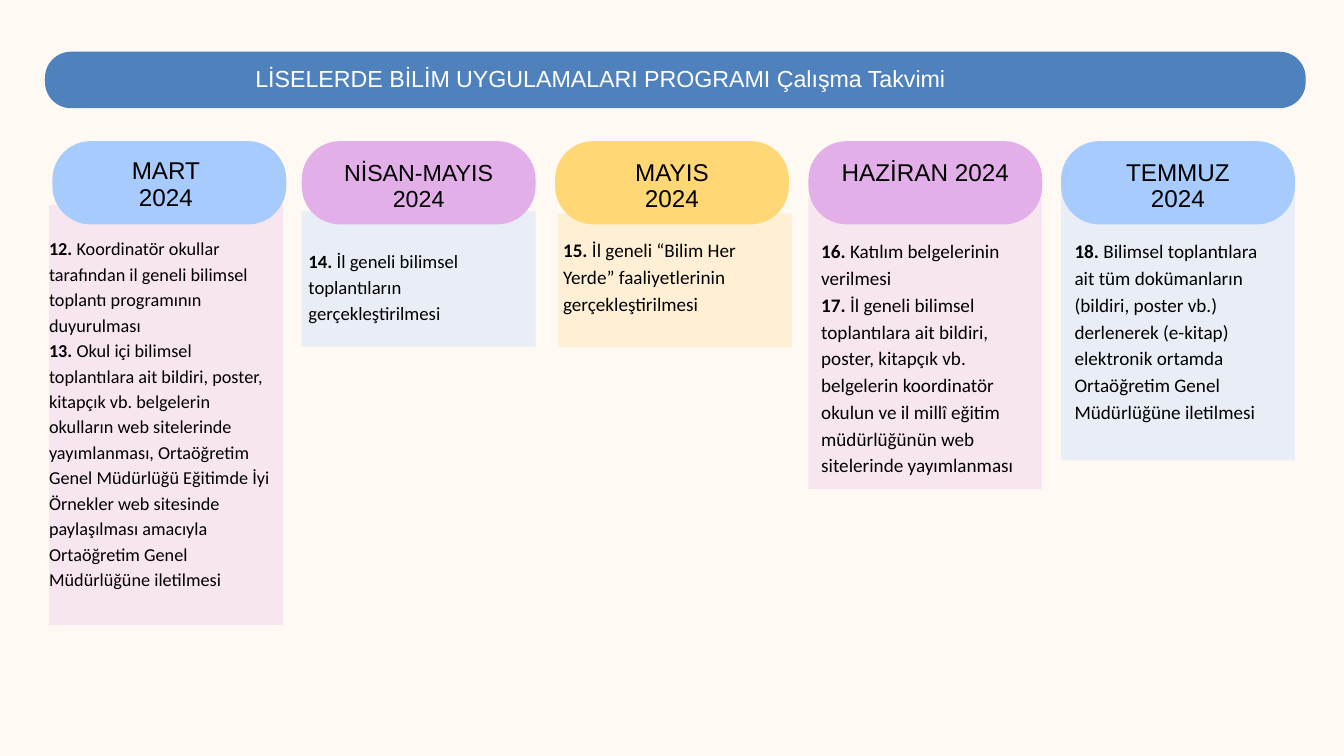
from dataclasses import dataclass

from lxml.etree import SubElement
from pptx import Presentation
from pptx.dml.color import RGBColor as Rgb
from pptx.enum.shapes import MSO_SHAPE as Shape
from pptx.enum.text import MSO_ANCHOR as Anchor, MSO_AUTO_SIZE as AutoSize, PP_ALIGN as Align
from pptx.oxml.ns import qn
from pptx.util import Inches, Pt

COLORS = {
    "paper": "FFF9F4", "banner": "4F81BD", "white": "FFFFFF", "black": "000000",
    "blue": "A8CBFD", "pink": "E3AFE8", "yellow": "FFD875", "pale_yellow": "FFD97A",
}
COLUMN_WIDTH, PILL_TOP, PILL_HEIGHT = 3.48, 2.1, 1.24
HEADING_WIDTH = 2.66


@dataclass
class Month:
    lines: list        # heading lines
    pill: tuple        # left, colour
    panel: tuple       # left, top, height, colour
    heading: tuple     # left, top, height, size
    body: tuple        # left, top, width, height, size
    tasks: list        # number, description


MONTHS = [
    Month(["MART", "2024"], (0.78, "blue"), (0.73, 3.05, 6.25, "pink"),
          (1.14, 2.35, 0.83, 26), (0.73, 3.48, 3.36, 6, 19.5),
          [("12. ", "Koordinatör okullar tarafından il geneli bilimsel toplantı "
                    "programının duyurulması"),
           ("13. ", "Okul içi bilimsel toplantılara ait bildiri, poster, kitapçık vb. "
                    "belgelerin okulların web sitelerinde yayımlanması, Ortaöğretim Genel "
                    "Müdürlüğü Eğitimde İyi Örnekler web sitesinde paylaşılması amacıyla "
                    "Ortaöğretim Genel Müdürlüğüne iletilmesi")]),
    Month(["NİSAN-MAYIS", "2024"], (4.49, "pink"), (4.49, 3.14, 2.02, "blue"),
          (4.9, 2.39, 0.76, 24.9), (4.59, 3.66, 3.29, 1.19, 20),
          [("14. ", "İl geneli bilimsel toplantıların gerçekleştirilmesi")]),
    Month(["MAYIS", "2024"], (8.26, "yellow"), (8.31, 3.18, 1.99, "pale_yellow"),
          (8.67, 2.37, 0.81, 26), (8.38, 3.49, 3.37, 1.55, 20.5),
          [("15. ", "İl geneli “Bilim Her Yerde” faaliyetlerinin gerçekleştirilmesi")]),
    Month(["HAZİRAN 2024"], (12.03, "pink"), (12.03, 2.96, 4.32, "pink"),
          (12.44, 2.38, 0.82, 26), (12.22, 3.51, 3.08, 4.34, 20.5),
          [("16. ", "Katılım belgelerinin verilmesi"),
           ("17. ", "İl geneli bilimsel toplantılara ait bildiri, poster, kitapçık vb. "
                    "belgelerin koordinatör okulun ve il millî eğitim müdürlüğünün web "
                    "sitelerinde yayımlanması")]),
    Month(["TEMMUZ", "2024"], (15.79, "blue"), (15.79, 2.72, 4.13, "blue"),
          (16.2, 2.37, 0.81, 26), (15.99, 3.51, 3.08, 3.19, 20.5),
          [("18. ", "Bilimsel toplantılara ait tüm dokümanların (bildiri, poster vb.) "
                    "derlenerek (e-kitap) elektronik ortamda Ortaöğretim Genel "
                    "Müdürlüğüne iletilmesi")]),
]


class Calendar:
    """Holds the style and the current slide."""
    heading_font, body_font = "Arial", "Calibri"

    def __init__(self, page):
        self.page = page
        page.background.fill.solid()
        page.background.fill.fore_color.rgb = Rgb.from_string(COLORS["paper"])

    def block(self, kind, place, color):
        shape = self.page.shapes.add_shape(kind, *map(Inches, place))
        shape.shadow.inherit = False
        shape.fill.solid()
        shape.fill.fore_color.rgb = Rgb.from_string(COLORS[color])
        shape.line.fill.background()
        return shape

    def panel(self, place, color):
        shape = self.block(Shape.RECTANGLE, place, color)
        tint = shape.element.spPr.find(qn("a:solidFill"))[0]
        SubElement(tint, qn("a:alpha"), val="25000")

    def pill(self, place, color):
        self.block(Shape.ROUNDED_RECTANGLE, place, color).adjustments[0] = 0.46

    def add_text(self, box, paragraphs, size, font, spacing, color="black", align=Align.LEFT):
        """Fill a box with paragraphs, each a list of (text, bold) runs."""
        frame = box.text_frame
        frame.word_wrap = True
        frame.auto_size = AutoSize.NONE
        frame.vertical_anchor = Anchor.TOP
        frame.margin_left = frame.margin_right = frame.margin_top = frame.margin_bottom = 0
        for index, runs in enumerate(paragraphs):
            para = frame.add_paragraph() if index else frame.paragraphs[0]
            para.alignment = align
            para.line_spacing = Pt(round(size * spacing, 1))
            for text, bold in runs:
                span = para.add_run()
                span.text = text
                span.font.name, span.font.size, span.font.bold = font, Pt(size), bold
                span.font.color.rgb = Rgb.from_string(COLORS[color])

    def title(self, place, text):
        box = self.page.shapes.title
        box.left, box.top, box.width, box.height = map(Inches, place)
        self.add_text(box, [[(text, False)]], 24.9, self.heading_font, 1, "white")
        box.element.getparent().append(box.element)  # in front of the banner

    def heading(self, place, lines, size):
        box = self.page.shapes.add_textbox(*map(Inches, place))
        self.add_text(box, [[(line, False)] for line in lines], size,
                      self.heading_font, 1.1, align=Align.CENTER)

    def tasks(self, place, items, size):
        box = self.page.shapes.add_textbox(*map(Inches, place))
        self.add_text(box, [[(number, True), (text, False)] for number, text in items],
                      size, self.body_font, 1.4)


def main():
    deck = Presentation()
    deck.slide_width, deck.slide_height = Inches(20), Inches(11.25)
    calendar = Calendar(deck.slides.add_slide(deck.slide_layouts[5]))

    # Banner with the title
    calendar.pill((0.67, 0.77, 18.76, 0.84), "banner")
    calendar.title((3.8, 1.02, 15.29, 1.47),
                   "LİSELERDE BİLİM UYGULAMALARI PROGRAMI Çalışma Takvimi")

    # One column per month
    for month in MONTHS:
        left, top, height, color = month.panel
        calendar.panel((left, top, COLUMN_WIDTH, height), color)
        left, color = month.pill
        calendar.pill((left, PILL_TOP, COLUMN_WIDTH, PILL_HEIGHT), color)
        left, top, height, size = month.heading
        calendar.heading((left, top, HEADING_WIDTH, height), month.lines, size)
        *place, size = month.body
        calendar.tasks(place, month.tasks, size)

    deck.save("out.pptx")


if __name__ == "__main__":
    main()
